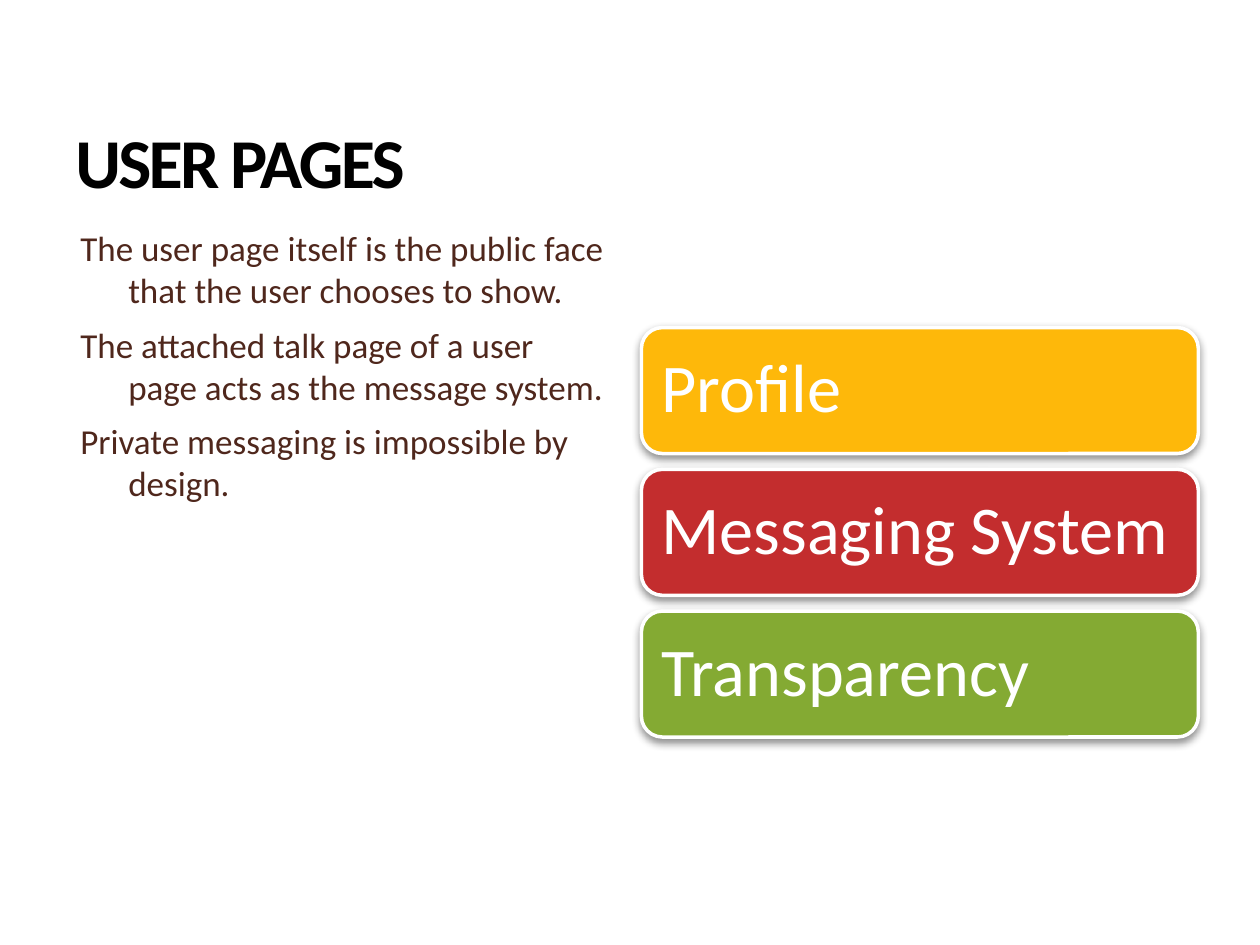
from dataclasses import dataclass

from lxml import etree
from pptx import Presentation
from pptx.dml.color import RGBColor
from pptx.enum.shapes import MSO_SHAPE
from pptx.enum.text import MSO_ANCHOR, PP_ALIGN
from pptx.oxml.ns import qn
from pptx.shapes.autoshape import Shape
from pptx.slide import Slide
from pptx.text.text import TextFrame, _Paragraph
from pptx.util import Pt

ROUNDED = MSO_SHAPE.ROUNDED_RECTANGLE
LEFT = PP_ALIGN.LEFT
TOP, MIDDLE, BOTTOM = MSO_ANCHOR.TOP, MSO_ANCHOR.MIDDLE, MSO_ANCHOR.BOTTOM


@dataclass(frozen=True)
class Theme:
    font: str = "Calibri"
    black: str = "000000"
    white: str = "FFFFFF"
    brown: str = "4F271C"
    amber: str = "FEB80A"
    red: str = "C32D2E"
    green: str = "84AA33"
    title_size: float = 40
    body_size: float = 20
    card_size: float = 39


@dataclass(frozen=True)
class Box:
    left: float
    top: float
    width: float
    height: float

    def lengths(self) -> list[Pt]:
        return [Pt(v) for v in (self.left, self.top, self.width, self.height)]


@dataclass(frozen=True)
class Card:
    label: str
    fill: str


THEME = Theme()

TITLE_BOX = Box(36, 16.5, 648, 102.5)
BODY_BOX = Box(36.7, 126, 318.3, 356.4)
FIRST_CARD = Box(366.5, 187.2, 318.3, 72)
CARD_PITCH = 81

BODY = [
    "The user page itself is the public face that the user chooses to show.",
    "The attached talk page of a user page acts as the message system.",
    "Private messaging is impossible by design.",
]
CARDS = [
    Card("Profile", THEME.amber),
    Card("Messaging System", THEME.red),
    Card("Transparency", THEME.green),
]


def add_run(p: _Paragraph, text: str, size: float, color: str,
            bold: bool = False, spacing: float = 0) -> None:
    r = p.add_run()
    r.text = text
    r.font.name = THEME.font
    r.font.size = Pt(size)
    r.font.bold = bold
    r.font.color.rgb = RGBColor.from_string(color)
    if spacing:
        r.font._element.set("spc", str(round(spacing * 100)))


def add_text_box(s: Slide, box: Box, anchor: MSO_ANCHOR) -> TextFrame:
    tf = s.shapes.add_textbox(*box.lengths()).text_frame
    tf.word_wrap = True
    tf.vertical_anchor = anchor
    return tf


def add_shadow(sp: Shape) -> None:
    """Soft black shadow, 2 pt straight down, 43 % opaque."""
    sp.shadow.inherit = False
    effects = sp._element.spPr.find(qn("a:effectLst"))
    shadow = etree.SubElement(effects, qn("a:outerShdw"), blurRad=str(Pt(5)),
                              dist=str(Pt(2)), dir="5400000", rotWithShape="0")
    color = etree.SubElement(shadow, qn("a:srgbClr"), val=THEME.black)
    etree.SubElement(color, qn("a:alpha"), val="43000")


def add_title(s: Slide, text: str) -> None:
    tf = add_text_box(s, TITLE_BOX, BOTTOM)
    add_run(tf.paragraphs[0], text, THEME.title_size, THEME.black,
            bold=True, spacing=-1.5)


def add_body(s: Slide, texts: list[str]) -> None:
    tf = add_text_box(s, BODY_BOX, TOP)
    for i, text in enumerate(texts):
        p = tf.add_paragraph() if i else tf.paragraphs[0]
        p.space_before = Pt(7)
        # Hanging indent
        pPr = p._p.get_or_add_pPr()
        pPr.set("marL", str(Pt(29.5)))
        pPr.set("indent", str(Pt(-27.4)))
        add_run(p, text, THEME.body_size, THEME.brown)


def add_card(s: Slide, card: Card, box: Box) -> None:
    sp = s.shapes.add_shape(ROUNDED, *box.lengths())
    sp.fill.solid()
    sp.fill.fore_color.rgb = RGBColor.from_string(card.fill)
    sp.line.color.rgb = RGBColor.from_string(THEME.white)
    sp.line.width = Pt(2)
    add_shadow(sp)
    tf = sp.text_frame
    tf.word_wrap = True
    tf.vertical_anchor = MIDDLE
    tf.margin_left = tf.margin_right = Pt(8)
    tf.margin_top = tf.margin_bottom = Pt(8)
    p = tf.paragraphs[0]
    p.alignment = LEFT
    p.line_spacing = 0.9
    add_run(p, card.label, THEME.card_size, THEME.white)


def main() -> None:
    prs = Presentation()
    prs.slide_width, prs.slide_height = Pt(720), Pt(540)
    s = prs.slides.add_slide(prs.slide_layouts[6])

    # Title and text on the left
    add_title(s, "USER PAGES")
    add_body(s, BODY)

    # Stack of cards on the right
    for i, card in enumerate(CARDS):
        top = FIRST_CARD.top + i * CARD_PITCH
        add_card(s, card, Box(FIRST_CARD.left, top,
                              FIRST_CARD.width, FIRST_CARD.height))

    prs.save("out.pptx")


if __name__ == "__main__":
    main()
